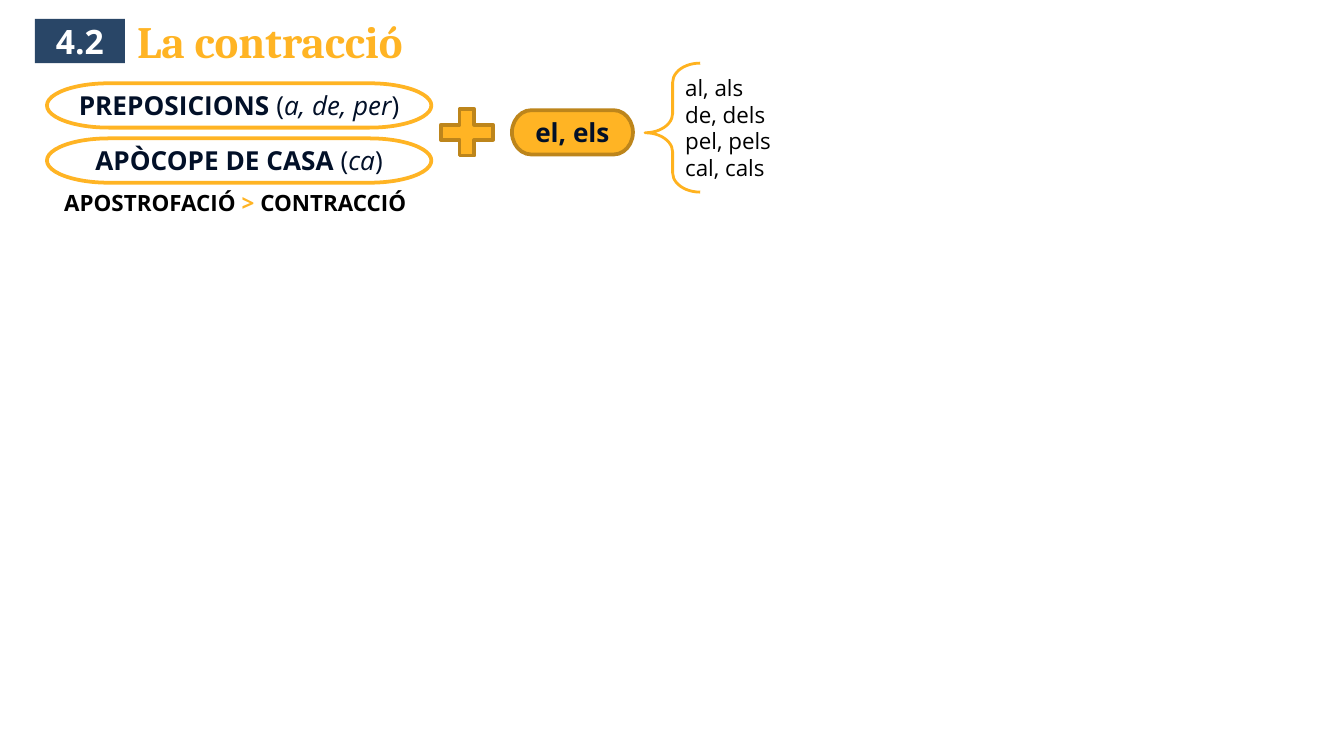
from pptx import Presentation
from pptx.dml.color import RGBColor
from pptx.enum.shapes import MSO_SHAPE as Shape
from pptx.enum.text import MSO_ANCHOR as Anchor, MSO_AUTO_SIZE as AutoSize, PP_ALIGN as Align
from pptx.util import Inches, Pt

AMBER = RGBColor(0xFF, 0xB4, 0x24)
BRACE_AMBER = RGBColor(0xFF, 0xB2, 0x1E)
BROWN = RGBColor(0xBD, 0x85, 0x1B)
NAVY = RGBColor(0x29, 0x46, 0x67)
INK = RGBColor(0x02, 0x10, 0x28)
BLACK = RGBColor(0, 0, 0)
WHITE = RGBColor(0xFF, 0xFF, 0xFF)


def write(paragraph, text, size=14, font="Open Sans", color=INK, bold=False, italic=False):
    run = paragraph.add_run()
    run.text = text
    run.font.size = Pt(size)
    run.font.name = font
    run.font.color.rgb = color
    run.font.bold = bold
    run.font.italic = italic


def set_margins(frame, margin):
    frame.margin_left = frame.margin_right = Inches(margin)
    frame.margin_top = frame.margin_bottom = Inches(margin)


def add_title(slide, text):
    title = slide.shapes.title
    title.left, title.top = Inches(0.92), Inches(0)
    title.width, title.height = Inches(5.71), Inches(0.47)
    frame = title.text_frame
    frame.auto_size = AutoSize.NONE
    frame.vertical_anchor = Anchor.TOP
    set_margins(frame, 0.1)
    paragraph = frame.paragraphs[0]
    paragraph.alignment = Align.LEFT
    write(paragraph, text, size=24, font="Cambria", color=AMBER, bold=True)


def add_figure(slide, kind, left, top, width, height, fill=None, line=None, weight=2):
    shape = slide.shapes.add_shape(
        kind, Inches(left), Inches(top), Inches(width), Inches(height))
    shape.shadow.inherit = False
    if fill is None:
        shape.fill.background()
    else:
        shape.fill.solid()
        shape.fill.fore_color.rgb = fill
    if line is None:
        shape.line.fill.background()
    else:
        shape.line.color.rgb = line
        shape.line.width = Pt(weight)
    return shape


def center_paragraph(shape):
    shape.text_frame.vertical_anchor = Anchor.MIDDLE
    paragraph = shape.text_frame.paragraphs[0]
    paragraph.alignment = Align.CENTER
    return paragraph


def add_term(slide, top, term, examples):
    pill = add_figure(slide, Shape.FLOWCHART_TERMINATOR, 0.35, top, 2.86, 0.33, line=AMBER)
    paragraph = center_paragraph(pill)
    write(paragraph, term, bold=True)
    write(paragraph, " (")
    write(paragraph, examples, italic=True)
    write(paragraph, ")")


def add_text_box(slide, left, top, width, height):
    box = slide.shapes.add_textbox(Inches(left), Inches(top), Inches(width), Inches(height))
    box.text_frame.word_wrap = False
    return box.text_frame


def add_rule(slide):
    paragraph = add_text_box(slide, 0.38, 1.36, 2.8, 0.3).paragraphs[0]
    write(paragraph, "APOSTROFACIÓ ", size=12, color=BLACK, bold=True)
    write(paragraph, ">", size=12, color=AMBER, bold=True)
    write(paragraph, " CONTRACCIÓ", size=12, color=BLACK, bold=True)


def add_results(slide, results):
    brace = add_figure(slide, Shape.LEFT_BRACE, 4.8, 0.47, 0.41, 0.96,
                       line=BRACE_AMBER, weight=1.5)
    brace.adjustments[0] = 0.35
    brace.adjustments[1] = 0.54
    frame = add_text_box(slide, 5, 0.5, 0.84, 0.91)
    for index, result in enumerate(results):
        paragraph = frame.add_paragraph() if index else frame.paragraphs[0]
        write(paragraph, result, size=12, color=BLACK)


def main():
    presentation = Presentation()
    presentation.slide_width = Inches(10)
    presentation.slide_height = Inches(10) * 9 // 16
    slide = presentation.slides.add_slide(presentation.slide_layouts[5])

    add_title(slide, "La contracció")
    badge = add_figure(slide, Shape.RECTANGLE, 0.26, 0.14, 0.67, 0.33, fill=NAVY)
    set_margins(badge.text_frame, 0.1)
    write(center_paragraph(badge), "4.2", size=18, color=WHITE, bold=True)

    add_term(slide, 0.62, "PREPOSICIONS", "a, de, per")
    add_term(slide, 1.03, "APÒCOPE DE CASA", "ca")
    add_figure(slide, Shape.MATH_PLUS, 3.21, 0.75, 0.53, 0.47, fill=AMBER, line=BROWN)
    article = add_figure(slide, Shape.FLOWCHART_TERMINATOR, 3.81, 0.82, 0.9, 0.33,
                         fill=AMBER, line=BROWN)
    write(center_paragraph(article), "el, els", bold=True)
    add_rule(slide)
    add_results(slide, ["al, als", "de, dels", "pel, pels", "cal, cals"])

    presentation.save("out.pptx")


if __name__ == "__main__":
    main()
